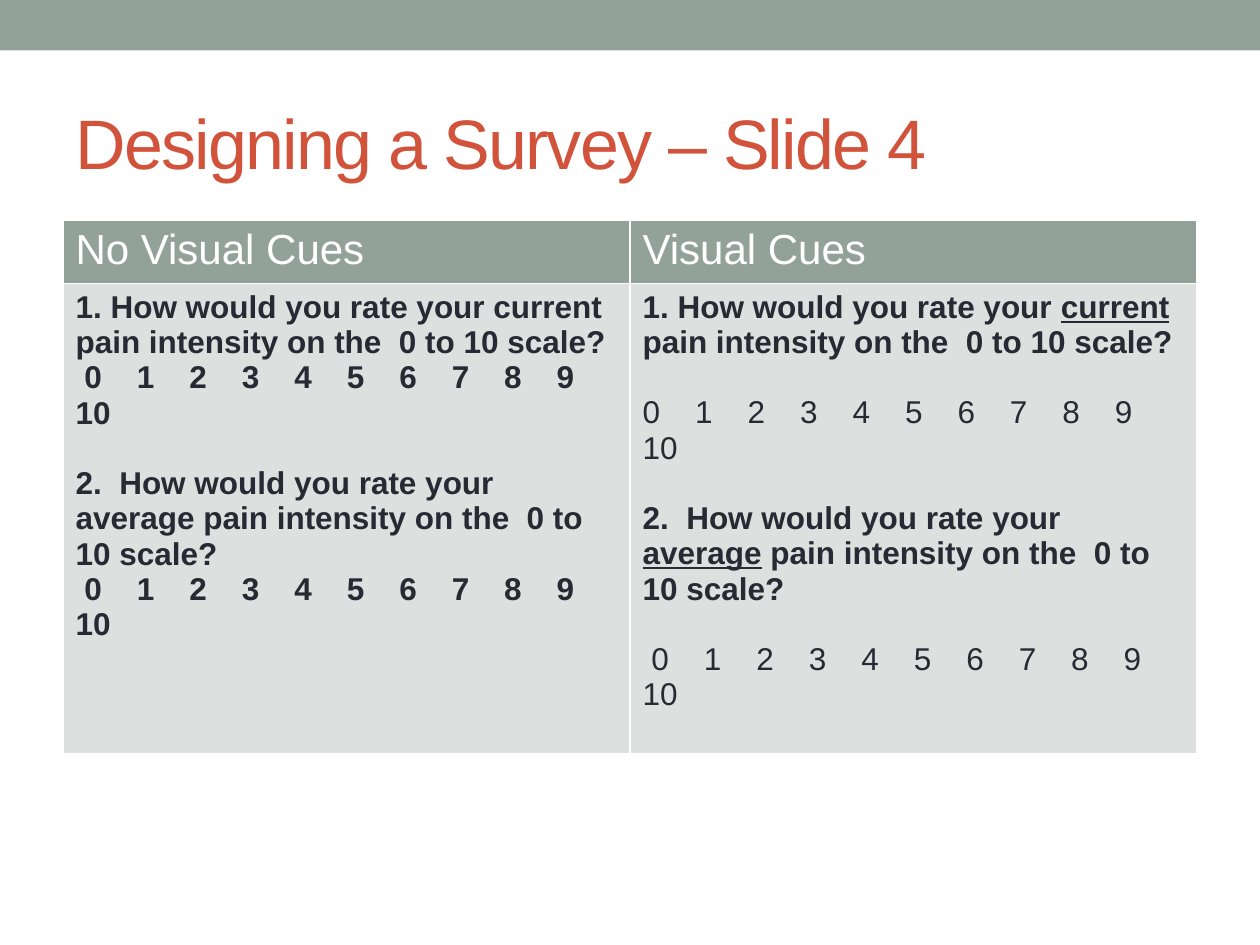
from lxml import etree
from pptx import Presentation
from pptx.dml.color import RGBColor
from pptx.enum.shapes import MSO_SHAPE
from pptx.enum.text import MSO_ANCHOR
from pptx.oxml.ns import qn
from pptx.util import Inches, Pt

RECTANGLE = MSO_SHAPE.RECTANGLE
MIDDLE = MSO_ANCHOR.MIDDLE

SAGE = RGBColor(0x93, 0xA2, 0x99)
PALE_SAGE = RGBColor(0xDC, 0xE0, 0xDE)
RUST = RGBColor(0xD2, 0x53, 0x3C)
INK = RGBColor(0x29, 0x29, 0x34)
WHITE = RGBColor(0xFF, 0xFF, 0xFF)

FONT = "Arial"
LINE_GAP = Pt(20)
SCALE_SPACING = 15

HEADINGS = ["No Visual Cues", "Visual Cues"]
# Each question: text before the key word, the key word, text after it
QUESTIONS = [
    ("1. How would you rate your ", "current", " pain intensity on the  0 to 10 scale?"),
    ("2.  How would you rate your ", "average", " pain intensity on the  0 to 10 scale?"),
]


def add_run(paragraph, text, size, color, bold=False, underline=False, spacing=0):
    """Add a styled run; spacing is the extra letter spacing in points."""
    run = paragraph.add_run()
    run.text = text
    font = run.font
    font.name, font.size, font.bold = FONT, Pt(size), bold
    font.color.rgb = color
    if underline:
        font.underline = True
    if spacing:
        font._element.set("spc", str(spacing * 100))


def add_top_band(slide):
    band = slide.shapes.add_shape(RECTANGLE, 0, 0, Inches(10), Inches(0.4))
    band.shadow.inherit = False
    band.fill.solid()
    band.fill.fore_color.rgb = SAGE
    band.line.fill.background()


def add_title(slide, text):
    title = slide.shapes.add_textbox(Inches(0.5), Inches(0.58), Inches(9), Inches(1.08))
    frame = title.text_frame
    frame.word_wrap = True
    frame.vertical_anchor = MIDDLE
    add_run(frame.paragraphs[0], text, 40, RUST, spacing=-1)


def style_cell(cell, color):
    """Give the cell thin white borders and a solid fill."""
    properties = cell._tc.get_or_add_tcPr()
    for side in ("lnL", "lnR", "lnT", "lnB"):
        border = etree.SubElement(properties, qn(f"a:{side}"), w=str(Pt(1)))
        fill = etree.SubElement(border, qn("a:solidFill"))
        etree.SubElement(fill, qn("a:srgbClr"), val=str(WHITE))
    cell.fill.solid()
    cell.fill.fore_color.rgb = color


def add_question(paragraph, parts, cued):
    before, key_word, after = parts
    add_run(paragraph, before, 18, INK, bold=True)
    add_run(paragraph, key_word, 18, INK, bold=True, underline=cued)
    add_run(paragraph, after, 18, INK, bold=True)


def add_scale(paragraph, start, bold):
    """Write 0 to 10 after the start text, with widened spaces between."""
    add_run(paragraph, f"{start}0", 18, INK, bold)
    for number in range(1, 11):
        add_run(paragraph, " ", 18, INK, bold, spacing=SCALE_SPACING)
        add_run(paragraph, str(number), 18, INK, bold)


def fill_survey(cell, cued):
    """Write both questions; cues underline key words and set the scales apart."""
    frame = cell.text_frame
    for index, parts in enumerate(QUESTIONS):
        question = frame.add_paragraph() if index else frame.paragraphs[0]
        if index:
            question.space_before = LINE_GAP
        add_question(question, parts, cued)
        scale = frame.add_paragraph()
        if cued:
            scale.space_before = LINE_GAP
        start = "" if cued and index == 0 else " "
        add_scale(scale, start, bold=not cued)


def add_comparison(slide):
    table = slide.shapes.add_table(
        2, 2, Inches(0.5), Inches(1.75), Inches(9), Inches(4.19)
    ).table
    table.rows[0].height = Inches(0.46)
    table.rows[1].height = Inches(3.73)
    for column, heading in enumerate(HEADINGS):
        header, survey = table.cell(0, column), table.cell(1, column)
        style_cell(header, SAGE)
        style_cell(survey, PALE_SAGE)
        add_run(header.text_frame.paragraphs[0], heading, 24, WHITE)
        fill_survey(survey, cued=column == 1)


def main():
    presentation = Presentation()
    presentation.slide_width = Inches(10)
    presentation.slide_height = Inches(7.5)
    slide = presentation.slides.add_slide(presentation.slide_layouts[6])
    add_top_band(slide)
    add_title(slide, "Designing a Survey – Slide 4")
    add_comparison(slide)
    presentation.save("out.pptx")


if __name__ == "__main__":
    main()
